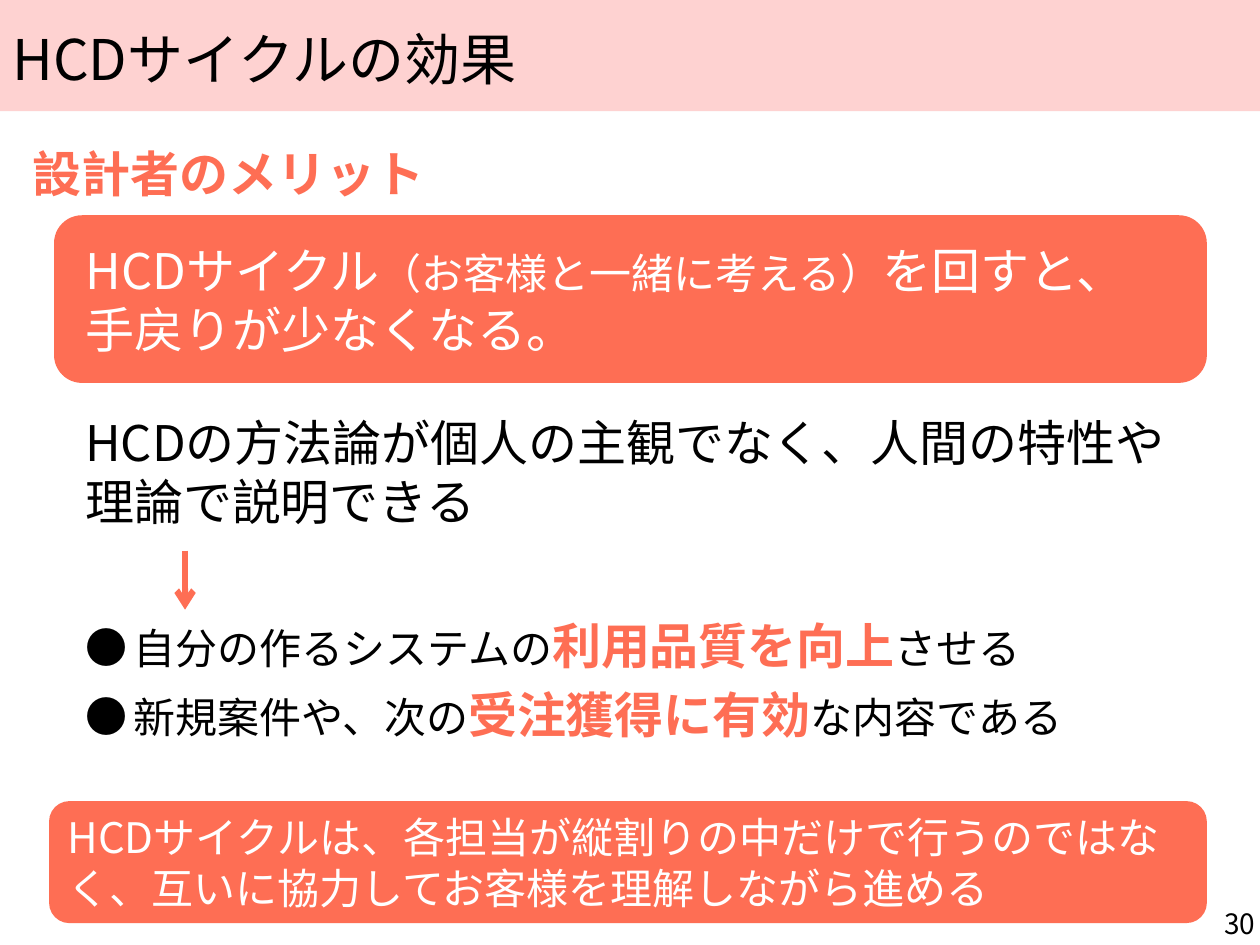
"""Build the slide on the benefits of the HCD cycle for designers."""
from lxml.etree import SubElement
from pptx import Presentation
from pptx.dml.color import RGBColor
from pptx.enum.shapes import MSO_CONNECTOR, MSO_SHAPE
from pptx.enum.text import MSO_ANCHOR, MSO_AUTO_SIZE, PP_ALIGN
from pptx.oxml.ns import qn
from pptx.util import Cm, Pt

FONT = "Noto Sans CJK JP"
COLORS = {"accent": "FE6E54", "band": "FED2D1", "black": "000000", "white": "FFFFFF"}
SPACED = {"space_before": Pt(5.6)}


def color(name):
    """Return the named colour."""
    return RGBColor.from_string(COLORS[name])


def apply_format(target, values):
    """Set every attribute named in a dict of format values."""
    for name, value in values.items():
        setattr(target, name, value)


def add_run(paragraph, text, size, color_name="black", bold=False):
    """Add one run of formatted text."""
    run = paragraph.add_run()
    run.text = text
    apply_format(run.font, {"name": FONT, "size": Pt(size), "bold": bold})
    run.font.color.rgb = color(color_name)
    SubElement(run.font._element, qn("a:ea"), typeface=FONT)


def set_indent(paragraph, left, bullet=None):
    """Set the left margin, with a hanging bullet if one is given."""
    properties = paragraph._p.get_or_add_pPr()
    properties.set("marL", str(Cm(left)))
    properties.set("indent", str(-Cm(left) if bullet else 0))
    if bullet:
        SubElement(properties, qn("a:buFont"), typeface=FONT)
        SubElement(properties, qn("a:buChar"), char=bullet)


def fill_text(shape, lines, frame_format=None, paragraph_format=None):
    """Write paragraphs of runs into a shape and return the paragraphs."""
    frame = shape.text_frame
    apply_format(frame, {"word_wrap": True, **(frame_format or {})})
    paragraphs = []
    for runs in lines:
        paragraph = frame.add_paragraph() if paragraphs else frame.paragraphs[0]
        apply_format(paragraph, {"alignment": PP_ALIGN.LEFT, **(paragraph_format or {})})
        for run in runs:
            add_run(paragraph, *run)
        paragraphs.append(paragraph)
    return paragraphs


def add_text(slide, box, lines, frame_format=None, paragraph_format=None):
    """Add a text box and return its paragraphs."""
    shape = slide.shapes.add_textbox(*map(Cm, box))
    return fill_text(shape, lines, frame_format, paragraph_format)


def add_block(slide, kind, box, color_name):
    """Add a plain filled shape without outline or shadow."""
    shape = slide.shapes.add_shape(kind, *map(Cm, box))
    shape.shadow.inherit = False
    shape.fill.solid()
    shape.fill.fore_color.rgb = color(color_name)
    shape.line.fill.background()
    return shape


def add_card(slide, box, runs):
    """Add a rounded accent card and return its paragraph."""
    shape = add_block(slide, MSO_SHAPE.ROUNDED_RECTANGLE, box, "accent")
    return fill_text(shape, [runs], {"vertical_anchor": MSO_ANCHOR.MIDDLE}, SPACED)[0]


def add_down_arrow(slide, x, top, bottom):
    """Add a vertical arrow that points down."""
    arrow = slide.shapes.add_connector(MSO_CONNECTOR.STRAIGHT, Cm(x), Cm(top), Cm(x), Cm(bottom))
    arrow.line.color.rgb = color("accent")
    arrow.line.width = Pt(3.5)
    SubElement(arrow.line._get_or_add_ln(), qn("a:tailEnd"), type="arrow")
    SubElement(arrow._element.spPr, qn("a:effectLst"))


def main():
    """Build and save the slide."""
    presentation = Presentation()
    apply_format(presentation, {"slide_width": Cm(25.4), "slide_height": Cm(19.05)})
    slide = presentation.slides.add_slide(presentation.slide_layouts[6])

    add_block(slide, MSO_SHAPE.RECTANGLE, (0, 0, 25.4, 2.24), "band")
    add_text(slide, (0, 0.2, 24, 2.11), [[("HCDサイクルの効果", 32)]],
             {"vertical_anchor": MSO_ANCHOR.MIDDLE, "margin_top": Cm(0.5), "margin_bottom": Cm(0.1)},
             {"line_spacing": Pt(22)})
    add_text(slide, (0.41, 2.77, 8.48, 1.45), [[("設計者のメリット", 28, "accent", True)]],
             {"word_wrap": False, "auto_size": MSO_AUTO_SIZE.SHAPE_TO_FIT_TEXT})
    add_text(slide, (1.47, 8.33, 22.25, 2.36),
             [[("HCDの方法論が個人の主観でなく、人間の特性や理論で説明できる", 28)]],
             {"vertical_anchor": MSO_ANCHOR.MIDDLE, "margin_right": 0}, SPACED)

    benefits = [("自分の作るシステムの", "利用品質を向上", "させる"),
                ("新規案件や、次の", "受注獲得に有効", "な内容である")]
    lines = [[(before, 24), (key, 28, "accent", True), (after, 24)]
             for before, key, after in benefits]
    for paragraph in add_text(slide, (1.47, 12.29, 22.25, 3.66), lines, None, SPACED):
        set_indent(paragraph, 0.97, "●")
    add_down_arrow(slide, 3.73, 11.1, 12.29)

    margins = {f"margin_{side}": Cm(0.1) for side in ("left", "top", "right", "bottom")}
    add_text(slide, (23.9, 18.03, 1.5, 1.02), [[("30", 16)]],
             {"vertical_anchor": MSO_ANCHOR.BOTTOM, **margins}, {"alignment": PP_ALIGN.RIGHT})

    claim = add_card(slide, (1.09, 4.34, 23.24, 3.38),
                     [("HCDサイクル", 28, "white"), ("（お客様と一緒に考える）", 24, "white"),
                      ("を回すと、", 28, "white")])
    claim.add_line_break()
    add_run(claim, "手戻りが少なくなる。", 28, "white")
    set_indent(claim, 0.23)
    add_card(slide, (0.99, 16.15, 23.34, 2.46),
             [("HCDサイクルは、各担当が縦割りの中だけで行うのではなく、"
               "互いに協力してお客様を理解しながら進める", 24, "white")])
    presentation.save("out.pptx")


if __name__ == "__main__":
    main()
